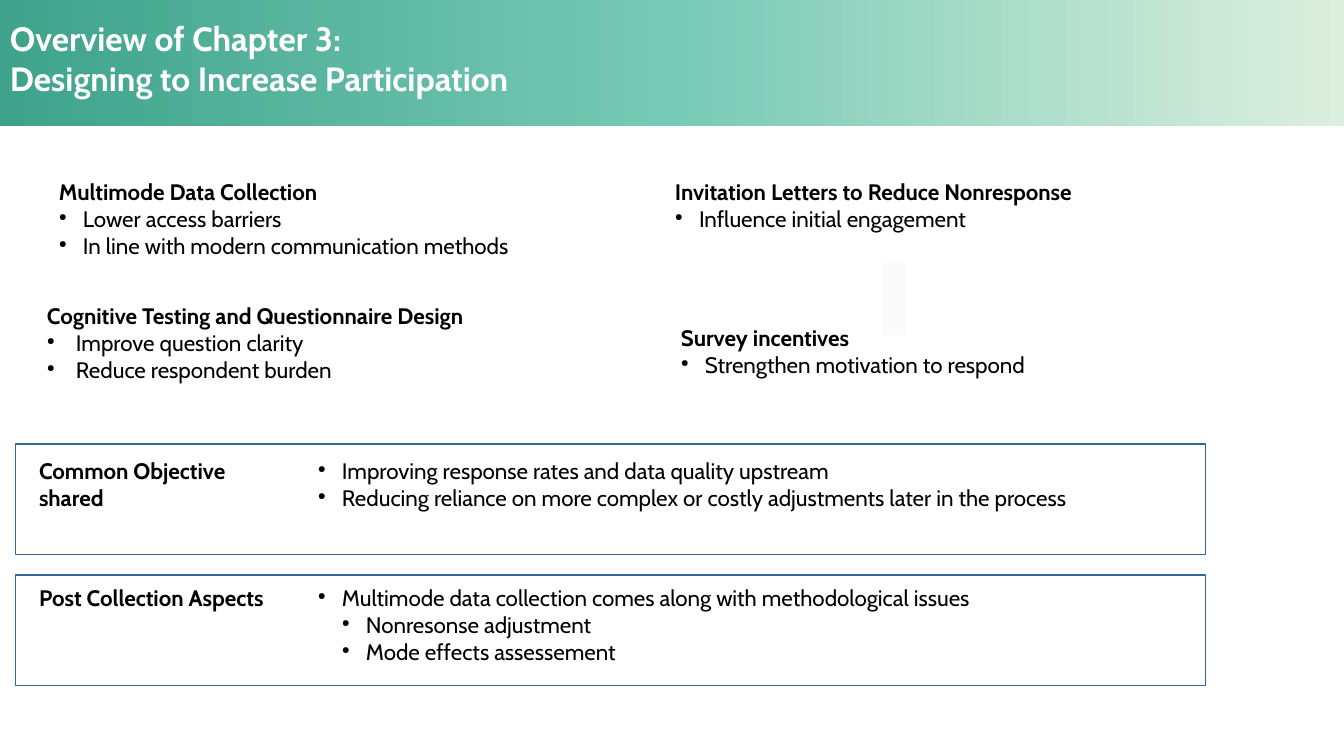
"""Build the Chapter 3 overview slide on designing to increase participation."""
from copy import deepcopy

from lxml import etree
from pptx import Presentation
from pptx.dml.color import RGBColor
from pptx.enum.shapes import MSO_SHAPE
from pptx.oxml.ns import qn
from pptx.util import Pt

RECTANGLE = MSO_SHAPE.RECTANGLE
PX = 914400 / 100.8
FONT = "Cabin"
COLORS = {
    "band_start": "3FA38B",
    "band_middle": "77CAB5",
    "band_end": "DDEFDF",
    "white": "FFFFFF",
    "black": "000000",
    "patch": "F9FAF9",
    "frame": "3465A4",
}

prs = Presentation()
prs.slide_width = round(1344 * PX)
prs.slide_height = round(756 * PX)
slide = prs.slides.add_slide(prs.slide_layouts[6])


def add_rectangle(*box):
    rectangle = slide.shapes.add_shape(RECTANGLE, *(round(v * PX) for v in box))
    rectangle.shadow.inherit = False
    return rectangle


def add_text(box, headings=(), bullets=(), size=16, color="black", inset=(0, 0), indent=24):
    frame = slide.shapes.add_textbox(*(round(v * PX) for v in box)).text_frame
    frame.word_wrap = True
    frame.margin_left = frame.margin_right = round(inset[0] * PX)
    frame.margin_top = frame.margin_bottom = round(inset[1] * PX)
    lines = [(text, None) for text in headings] + list(bullets)
    for index, (text, level) in enumerate(lines):
        paragraph = frame.paragraphs[0] if index == 0 else frame.add_paragraph()
        if level is not None:
            paragraph.level = level
            props = paragraph._p.get_or_add_pPr()
            props.set("marL", str(round(indent * (level + 1) * PX)))
            props.set("indent", str(round(-indent * PX)))
            bullet_color = etree.SubElement(props, qn("a:buClr"))
            etree.SubElement(bullet_color, qn("a:srgbClr"), val=COLORS["black"])
            etree.SubElement(props, qn("a:buSzPct"), val="45000")
            etree.SubElement(props, qn("a:buChar"), char="●")
        run = paragraph.add_run()
        run.text = text
        run.font.name = FONT
        run.font.size = Pt(size)
        run.font.bold = level is None
        run.font.color.rgb = RGBColor.from_string(COLORS[color])


header_band = add_rectangle(0, 0, 1344, 126)
header_band.line.fill.background()
header_band.fill.gradient()
header_band.fill.gradient_angle = 0
first_stop = header_band._element.spPr.find(".//" + qn("a:gs"))
first_stop.addnext(deepcopy(first_stop))
band_colors = ("band_start", "band_middle", "band_end")
for index, (stop, name) in enumerate(zip(header_band.fill.gradient_stops, band_colors)):
    stop.position = index / 2
    stop.color.rgb = RGBColor.from_string(COLORS[name])

add_text((0, 13, 1310, 91), ["Overview of Chapter 3:", "Designing to Increase Participation"],
         size=24, color="white", inset=(10, 5))

pale_patch = add_rectangle(882, 263, 23, 72)
pale_patch.fill.solid()
pale_patch.fill.fore_color.rgb = RGBColor.from_string(COLORS["patch"])
pale_patch.line.fill.background()

topics = [
    ((59, 178, 457, 140), "Multimode Data Collection",
     ["Lower access barriers", "In line with modern communication methods"], 24),
    ((675, 178, 550, 125), "Invitation Letters to Reduce Nonresponse",
     ["Influence initial engagement"], 24),
    ((681, 324, 509, 93), "Survey incentives", ["Strengthen motivation to respond"], 24),
    ((47, 302, 457, 146), "Cognitive Testing and Questionnaire Design",
     ["Improve question clarity", "Reduce respondent burden"], 29),
]
for box, heading, points, indent in topics:
    add_text(box, [heading], [(point, 0) for point in points], indent=indent)

summaries = [
    (444, 457, "Common Objective shared", [
        ("Improving response rates and data quality upstream", 0),
        ("Reducing reliance on more complex or costly adjustments later in the process", 0),
    ]),
    (575, 584, "Post Collection Aspects", [
        ("Multimode data collection comes along with methodological issues", 0),
        ("Nonresonse adjustment", 1),
        ("Mode effects assessement", 1),
    ]),
]
for frame_top, text_top, heading, points in summaries:
    summary_frame = add_rectangle(16, frame_top, 1190, 111)
    summary_frame.fill.background()
    summary_frame.line.color.rgb = RGBColor.from_string(COLORS["frame"])
    summary_frame.line.width = Pt(0)
    add_text((39, text_top, 238, 84), [heading])
    add_text((318, text_top, 873, 84), bullets=points)

prs.save("out.pptx")
